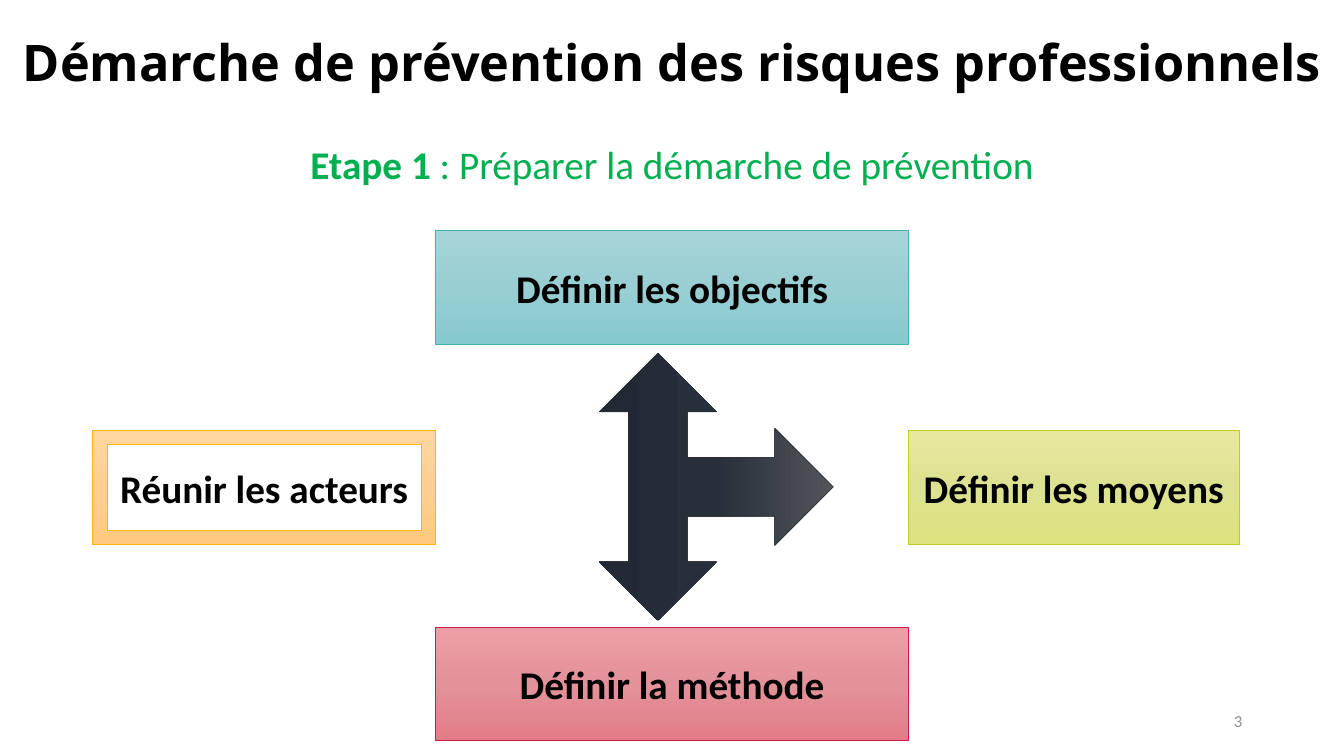
from copy import deepcopy

from pptx import Presentation
from pptx.dml.color import RGBColor
from pptx.enum.shapes import MSO_SHAPE
from pptx.enum.text import MSO_ANCHOR, PP_ALIGN
from pptx.oxml.ns import qn
from pptx.util import Inches, Pt

THEME = {
    "body": "Calibri", "heading": "Noto Sans",
    "black": "000000", "green": "00B050", "grey": "8E8F91",
    "title": 36, "text": 28, "number": 12, "line": 0.5,
    # gradient from top to bottom, then outline
    "teal": (("A6D5D9", "99CED2", "86CACF"), "42AFB6"),
    "orange": (("FFD6A0", "FFCF92", "FFC97E"), "FCB414"),
    "lime": (("E5EA9F", "DDE292", "DCE27D"), "C2C923"),
    "red": (("ED9EA7", "E3919A", "E47D88"), "CB1B4A"),
    "dark": (("52555A", "272F3A", "222934"), "282F39"),
}
TITLE = "Démarche de prévention des risques professionnels"
STEP = ("Etape 1 ", ": Préparer la démarche de prévention")
PAGE = "3"

BOX_H, MID_X, MID_W, ROW_Y = 1.13, 4.32, 4.69, 4.27
LEFT_W, RIGHT_W = 3.4, 3.28
BOXES = [
    ("Définir les objectifs", MSO_SHAPE.RECTANGLE, "teal", MID_X, 2.29, MID_W),
    ("Réunir les acteurs", MSO_SHAPE.FRAME, "orange", MID_X - LEFT_W, ROW_Y, LEFT_W),
    ("Définir les moyens", MSO_SHAPE.RECTANGLE, "lime", MID_X + MID_W, ROW_Y, RIGHT_W),
    ("Définir la méthode", MSO_SHAPE.RECTANGLE, "red", MID_X, 6.22, MID_W),
]
ARROW = (5.78, 3.67, 2.65, 2.32)


def add_run(p, text, font=THEME["body"], size=THEME["text"], color=THEME["black"], bold=False):
    r = p.add_run()
    r.text = text
    r.font.name, r.font.size, r.font.bold = font, Pt(size), bold
    r.font.color.rgb = RGBColor.from_string(color)


def prepare_text(sp, align=PP_ALIGN.CENTER):
    """Wrap and centre the text vertically; return its first paragraph."""
    tf = sp.text_frame
    tf.word_wrap = True
    tf.vertical_anchor = MSO_ANCHOR.MIDDLE
    p = tf.paragraphs[0]
    p.alignment = align
    return p


def add_gradient_shape(s, kind, box, style):
    sp = s.shapes.add_shape(kind, *map(Inches, box))
    colors, outline = THEME[style]
    sp.shadow.inherit = False
    sp.fill.gradient()
    sp.fill.gradient_angle = 270
    stop_list = sp._element.spPr.find(qn("a:gradFill")).find(qn("a:gsLst"))
    stop_list.append(deepcopy(stop_list[0]))
    for i, (stop, color) in enumerate(zip(sp.fill.gradient_stops, colors)):
        stop.position = i / (len(colors) - 1)
        stop.color.rgb = RGBColor.from_string(color)
    sp.line.color.rgb = RGBColor.from_string(outline)
    sp.line.width = Pt(THEME["line"])
    return sp


def main():
    prs = Presentation()
    prs.slide_width, prs.slide_height = Inches(13.33), Inches(7.5)
    s = prs.slides.add_slide(prs.slide_layouts[6])

    number = s.shapes.add_textbox(*map(Inches, (9.42, 6.95, 3, 0.4)))
    add_run(prepare_text(number, PP_ALIGN.RIGHT), PAGE, size=THEME["number"], color=THEME["grey"])

    heading = s.shapes.add_textbox(*map(Inches, (0, 0.4, 13.33, 1.45)))
    p = prepare_text(heading)
    p.line_spacing = 0.9
    add_run(p, TITLE, font=THEME["heading"], size=THEME["title"], bold=True)
    p = heading.text_frame.add_paragraph()
    p.alignment, p.line_spacing, p.space_before = PP_ALIGN.CENTER, 0.9, Pt(38)
    for text, bold in zip(STEP, (True, False)):
        add_run(p, text, color=THEME["green"], bold=bold)

    for text, kind, style, x, y, w in BOXES:
        sp = add_gradient_shape(s, kind, (x, y, w, BOX_H), style)
        add_run(prepare_text(sp), text, bold=True)

    arrow = add_gradient_shape(s, MSO_SHAPE.LEFT_RIGHT_UP_ARROW, ARROW, "dark")
    arrow.rotation = 90

    prs.save("out.pptx")


if __name__ == "__main__":
    main()
